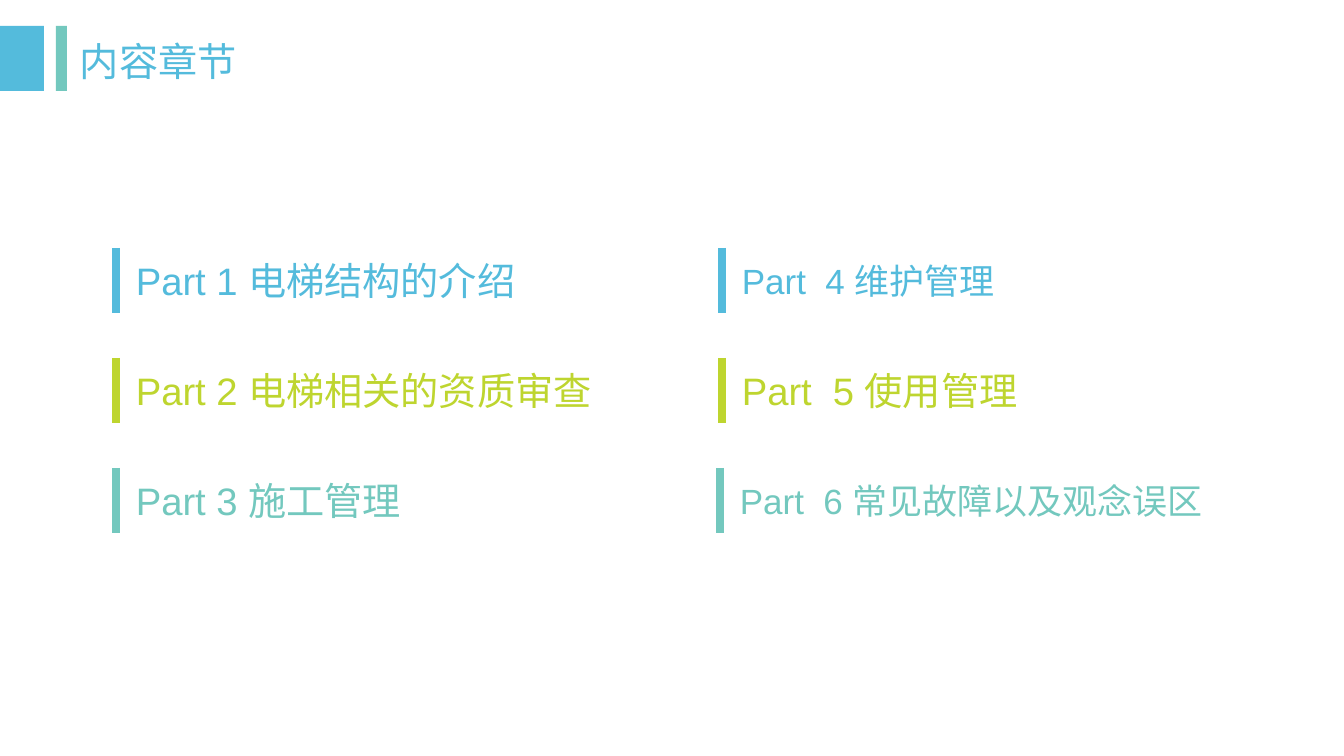
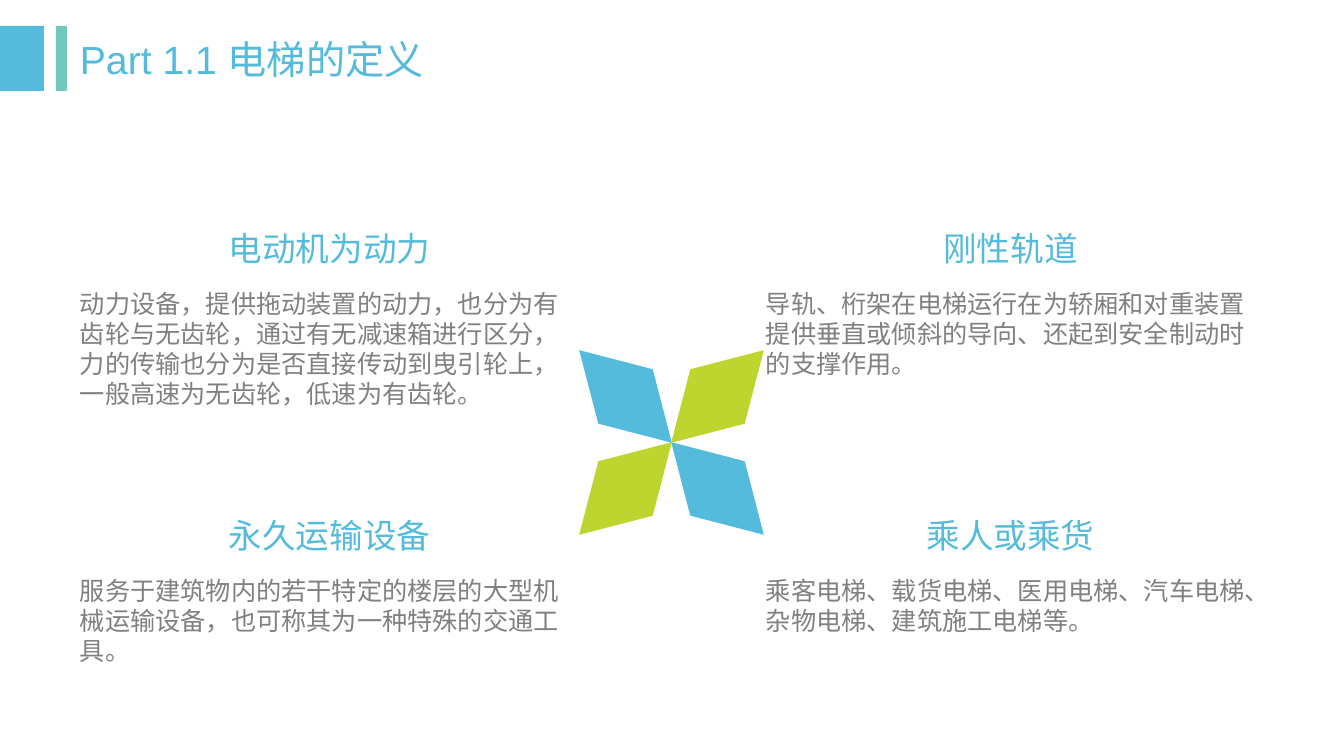
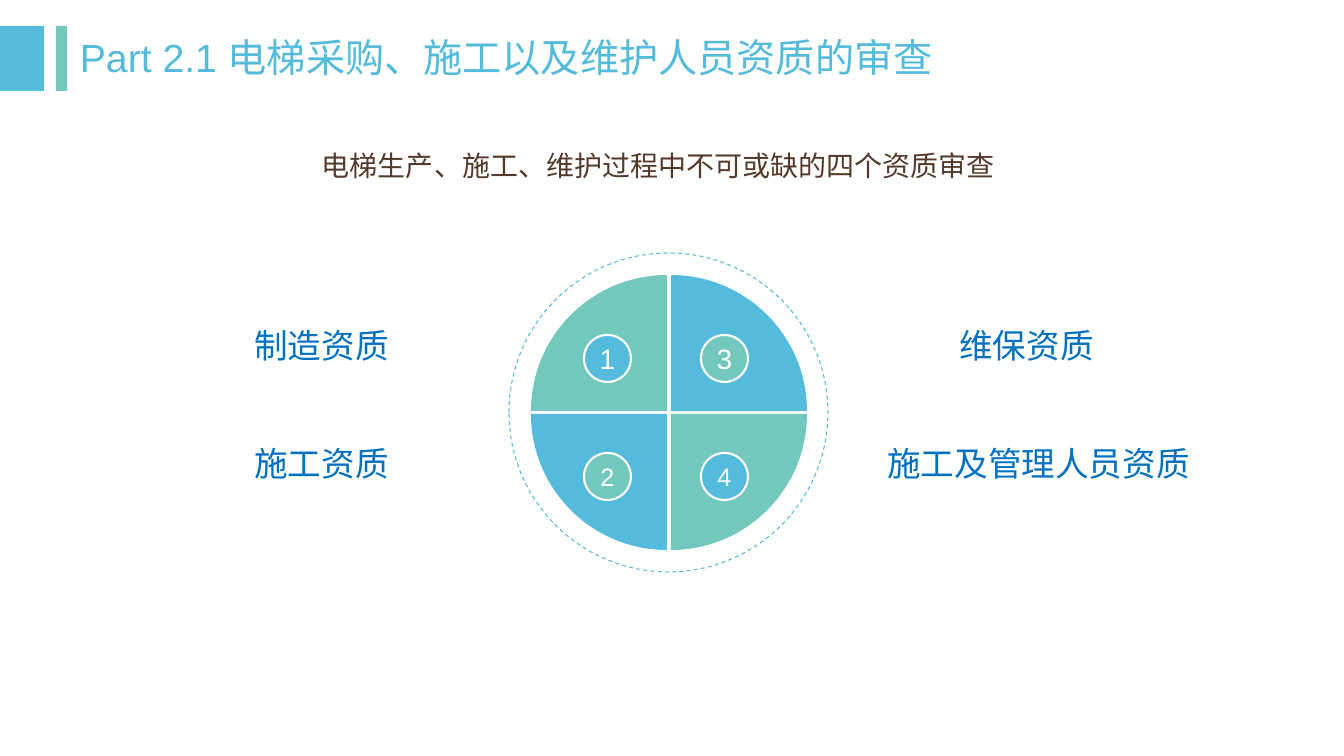
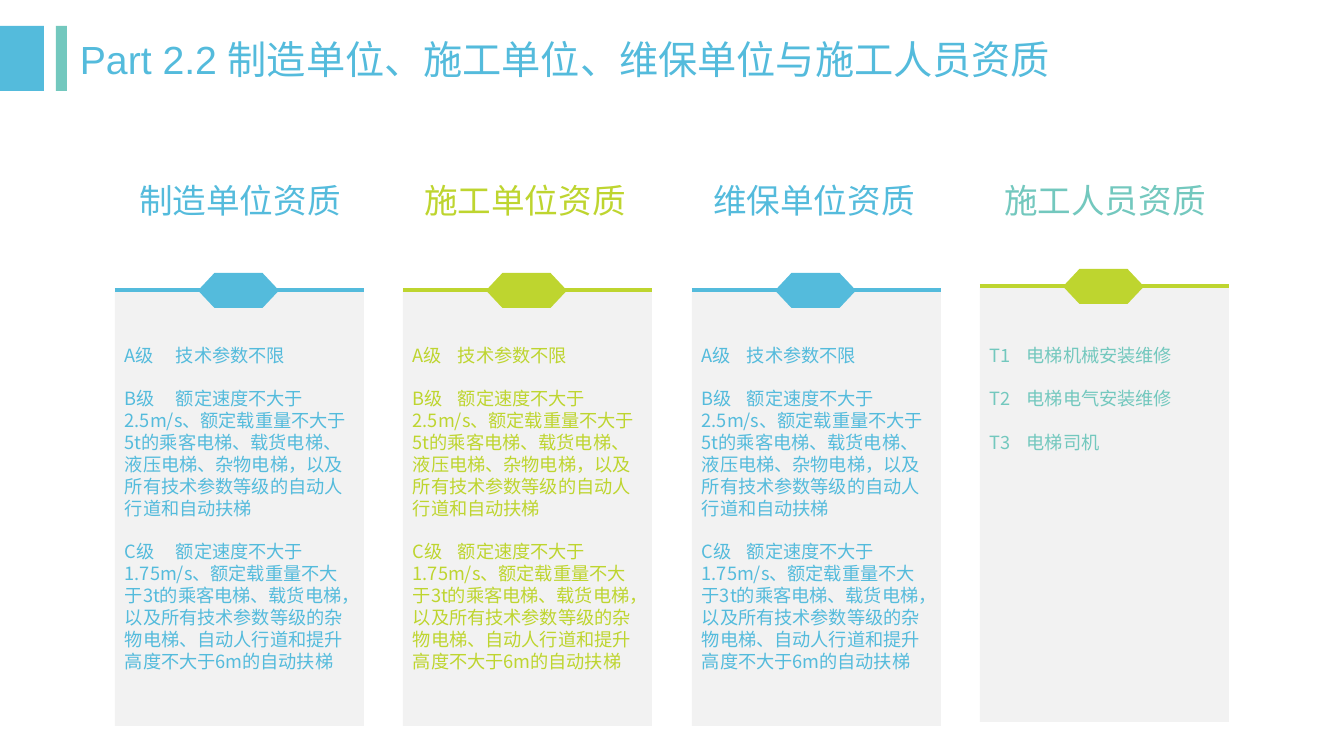
"""Build four slides on elevator structure and qualification review."""
import pptx
import pptx.util
import pptx.dml.color
import pptx.enum.dml
import pptx.enum.shapes
import pptx.enum.text
import pptx.oxml
import pptx.oxml.ns

SCALE = 914400 / 100.8
HUES = {"blue": "54BBDC", "teal": "73C8BE", "lime": "BED52F", "gray": "808080",
        "pale": "F2F2F2", "navy": "0070C0", "brown": "553A2B", "white": "FFFFFF"}
SHAPE = pptx.enum.shapes.MSO_SHAPE
ALIGN = pptx.enum.text.PP_ALIGN
ANCHOR = pptx.enum.text.MSO_ANCHOR


def put(slide, box, text="", kind=None, fill=None, edge=None, width=1.5, dash=False,
        turn=0, size=18, hue="blue", font="Arial", center=False, middle=False,
        wrap=True, gap=0, tab=0):
    place = [round(n * SCALE) for n in box]
    if kind is None:
        shape = slide.shapes.add_textbox(*place)
    else:
        shape = slide.shapes.add_shape(kind, *place)
        shape.shadow.inherit = False
        shape.rotation = turn
        if fill:
            shape.fill.solid()
            shape.fill.fore_color.rgb = pptx.dml.color.RGBColor.from_string(HUES[fill])
        else:
            shape.fill.background()
        if edge:
            shape.line.color.rgb = pptx.dml.color.RGBColor.from_string(HUES[edge])
            shape.line.width = pptx.util.Pt(width)
            if dash:
                shape.line.dash_style = pptx.enum.dml.MSO_LINE.DASH
        else:
            shape.line.fill.background()
    if not text:
        return shape
    frame = shape.text_frame
    frame.word_wrap = wrap
    frame.vertical_anchor = ANCHOR.MIDDLE if middle else ANCHOR.TOP
    frame.text = text
    for row, para in enumerate(frame.paragraphs):
        para.alignment = ALIGN.CENTER if center else ALIGN.LEFT
        if gap and row:
            para.space_before = pptx.util.Pt(gap)
        if tab:
            stops = pptx.oxml.parse_xml(
                f'<a:tabLst {pptx.oxml.ns.nsdecls("a")}>'
                f'<a:tab pos="{round(tab * SCALE)}" algn="l"/></a:tabLst>')
            para._p.get_or_add_pPr().append(stops)
        for run in para.runs:
            run.font.name = font
            run.font.size = pptx.util.Pt(size)
            run.font.color.rgb = pptx.dml.color.RGBColor.from_string(HUES[hue])
    return shape


def rule(slide, ends, hue, width):
    line = slide.shapes.add_connector(pptx.enum.shapes.MSO_CONNECTOR.STRAIGHT,
                                      *[round(n * SCALE) for n in ends])
    line.line.color.rgb = pptx.dml.color.RGBColor.from_string(HUES[hue])
    line.line.width = pptx.util.Pt(width)
    line._element.spPr.append(
        pptx.oxml.parse_xml(f'<a:effectLst {pptx.oxml.ns.nsdecls("a")}/>'))


deck = pptx.Presentation()
deck.slide_width = round(1344 * SCALE)
deck.slide_height = round(756 * SCALE)

titles = [
    ("内容章节", 27),
    ("Part 1.1 电梯的定义", 25),
    ("Part 2.1 电梯采购、施工以及维护人员资质的审查", 23),
    ("Part 2.2 制造单位、施工单位、维保单位与施工人员资质", 25),
]
pages = []
for title, top in titles:
    page = deck.slides.add_slide(deck.slide_layouts[6])
    put(page, (0, 26, 44, 65), kind=SHAPE.RECTANGLE, fill="blue")
    put(page, (56, 26, 11, 65), kind=SHAPE.RECTANGLE, fill="teal")
    put(page, (70, top, 1059, 67), title, size=28, middle=True)
    pages.append(page)
index, define, review, grades = pages

parts = [
    (116, 0, "Part 1 电梯结构的介绍", 27.3, "blue"),
    (116, 1, "Part 2 电梯相关的资质审查", 27.3, "lime"),
    (116, 2, "Part 3 施工管理", 27.3, "teal"),
    (722, 0, "Part  4 维护管理", 25, "blue"),
    (722, 1, "Part  5 使用管理", 27.3, "lime"),
    (720, 2, "Part  6 常见故障以及观念误区", 25, "teal"),
]
for left, row, text, size, hue in parts:
    top = 248 + 110 * row
    put(index, (left + 10, top + 4, 496, 57), text, size=size, hue=hue, middle=True)
    rule(index, (left, top, left, top + 65), hue, 6)

for col in range(2):
    for row in range(2):
        same = col == row
        put(define, (560 + 92 * col, 358 + 92 * row, 131, 77),
            kind=SHAPE.FLOWCHART_DECISION, fill="blue" if same else "lime",
            turn=45 if same else 135)

traits = [
    (70, 519, 223, "电动机为动力",
     "动力设备，提供拖动装置的动力，也分为有齿轮与无齿轮，通过有无减速箱进行区分，"
     "力的传输也分为是否直接传动到曳引轮上，一般高速为无齿轮，低速为有齿轮。"),
    (756, 509, 223, "刚性轨道",
     "导轨、桁架在电梯运行在为轿厢和对重装置提供垂直或倾斜的导向、还起到安全制动时的支撑作用。"),
    (70, 519, 510, "永久运输设备",
     "服务于建筑物内的若干特定的楼层的大型机械运输设备，也可称其为一种特殊的交通工具。"),
    (756, 509, 510, "乘人或乘货",
     "乘客电梯、载货电梯、医用电梯、汽车电梯、杂物电梯、建筑施工电梯等。"),
]
for left, wide, top, head, body in traits:
    put(define, (left, top, wide, 60), head, size=24, center=True)
    put(define, (left, top + 60, wide, 101), body, hue="gray")

put(review, (312, 144, 711, 44), "电梯生产、施工、维护过程中不可或缺的四个资质审查",
    size=20, hue="brown")
put(review, (509, 253, 319, 319), kind=SHAPE.OVAL, edge="blue", width=0.75, dash=True)
checks = [
    (0, 0, 0, "teal", "blue", 20, (112, 419), "制造资质"),
    (0, 1, 270, "blue", "teal", 18, (118, 407), "施工资质"),
    (1, 0, 90, "blue", "teal", 20, (817, 419), "维保资质"),
    (1, 1, 180, "teal", "blue", 18, (829, 419), "施工及管理人员资质"),
]
for rank, (col, row, turn, fill, disc, size, span, text) in enumerate(checks, 1):
    put(review, (531 + 140 * col, 275 + 139 * row, 136, 136),
        kind=SHAPE.PIE_WEDGE, fill=fill, turn=turn)
    put(review, (584 + 117 * col, 335 + 118 * row, 47, 47), str(rank), kind=SHAPE.OVAL,
        fill=disc, edge="white", size=size, hue="white", center=True, middle=True, wrap=False)
    put(review, (span[0], 320 + 118 * row, span[1], 64), text, size=24, hue="navy", center=True)

levels = (
    "A级\t技术参数不限\n"
    "B级\t额定速度不大于2.5m/s、额定载重量不大于5t的乘客电梯、载货电梯、液压电梯、"
    "杂物电梯，以及所有技术参数等级的自动人行道和自动扶梯\n"
    "C级\t额定速度不大于1.75m/s、额定载重量不大于3t的乘客电梯、载货电梯，"
    "以及所有技术参数等级的杂物电梯、自动人行道和提升高度不大于6m的自动扶梯")
crafts = "T1\t电梯机械安装维修\nT2\t电梯电气安装维修\nT3\t电梯司机"
cards = [
    ("制造单位资质", 104, "blue", "blue", 0, levels, 51),
    ("施工单位资质", 389, "lime", "lime", 0, levels, 45),
    ("维保单位资质", 678, "blue", "blue", 0, levels, 45),
    ("施工人员资质", 969, "teal", "lime", 4, crafts, 37),
]
for col, (head, start, hue, mark, lift, body, tab) in enumerate(cards):
    left = 115 + 577 * col // 2
    top = 291 - lift
    put(grades, (left, top, 249, 435), kind=SHAPE.RECTANGLE, fill="pale")
    badge = put(grades, (left + 83, top - 18, 81, 35), kind=SHAPE.HEXAGON, fill=mark)
    badge.adjustments[0] = 0.47
    rule(grades, (left, top - 1, left + 249, top - 1), mark, 3)
    put(grades, (start, 155, 272, 90), head, size=24, hue=hue, center=True, middle=True)
    put(grades, (left, 339, 249, 369), body, size=13, hue=hue,
        font="Noto Sans CJK SC", gap=15.6, tab=tab)

deck.save("out.pptx")
